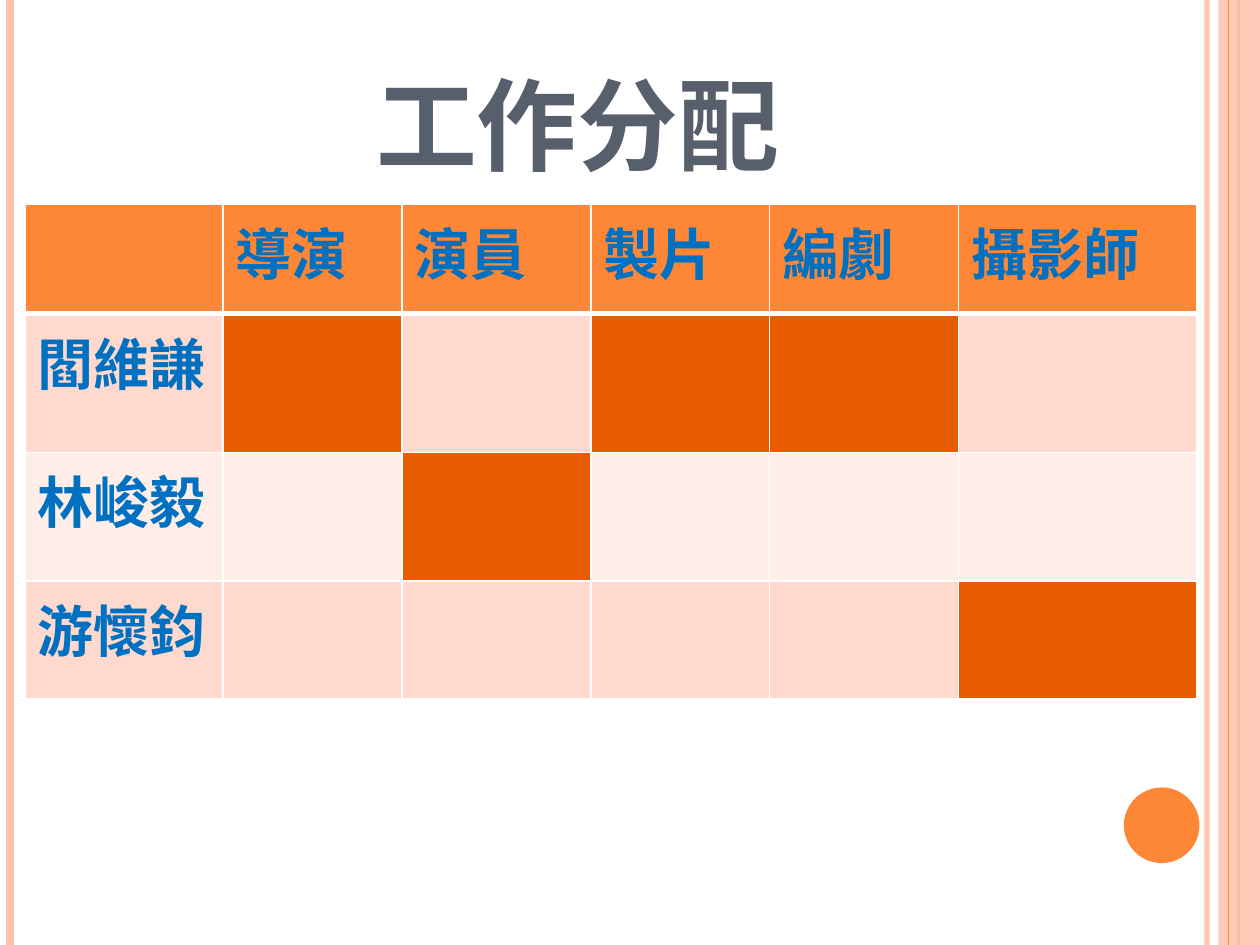
from dataclasses import dataclass
from typing import Optional

from lxml.etree import SubElement
from pptx import Presentation
from pptx.dml.color import RGBColor
from pptx.enum.shapes import MSO_CONNECTOR, MSO_SHAPE
from pptx.enum.text import MSO_ANCHOR, PP_ALIGN
from pptx.oxml import parse_xml
from pptx.oxml.ns import nsdecls, qn
from pptx.util import Inches, Pt

WIDTH, HEIGHT = 10, 7.5


@dataclass(frozen=True)
class Theme:
    font: str = "Noto Sans CJK SC"
    title_size: int = 72
    table_size: int = 32
    title: str = "575F6D"
    table_text: str = "0070C0"
    accent: str = "FE8637"
    pale_accent: str = "FEC3AE"
    assigned: str = "E75C01"
    bands: tuple = ("FFD9CE", "FFEDE8")
    border: str = "FFFFFF"


@dataclass(frozen=True)
class Stripe:
    x: float
    color: str
    weight: float
    opacity: Optional[int] = None


@dataclass(frozen=True)
class Member:
    name: str
    jobs: tuple
    height: float


THEME = Theme()
BACK_STRIPES = (
    Stripe(9.58, THEME.pale_accent, 3, 93),
    Stripe(0.08, THEME.pale_accent, 4.5),
    Stripe(9.83, THEME.accent, 1.5),
)
FRONT_STRIPE = Stripe(9.75, THEME.accent, 0.75)
JOBS = ("導演", "演員", "製片", "編劇", "攝影師")
COLUMN_WIDTHS = (1.57, 1.42, 1.5, 1.42, 1.5, 1.89)
HEADER_HEIGHT = 0.87
MEMBERS = (
    Member("閻維謙", ("導演", "製片", "編劇"), 1.1),
    Member("林峻毅", ("演員",), 1.02),
    Member("游懷鈞", ("攝影師",), 0.94),
)


def set_opacity(properties, percent: int) -> None:
    color = next(properties.iter(qn("a:srgbClr")))
    SubElement(color, qn("a:alpha"), val=str(percent * 1000))


def style_paragraph(paragraph, size: int, color: str) -> None:
    font = paragraph.font
    font.size, font.bold = Pt(size), True
    font.color.rgb = RGBColor.from_string(color)
    font.name = THEME.font
    properties = paragraph._p.pPr.find(qn("a:defRPr"))
    SubElement(properties, qn("a:ea"), typeface=THEME.font)


def add_stripe(slide, stripe: Stripe) -> None:
    x = Inches(stripe.x)
    connector = slide.shapes.add_connector(
        MSO_CONNECTOR.STRAIGHT, x, 0, x, Inches(HEIGHT))
    connector.line.color.rgb = RGBColor.from_string(stripe.color)
    connector.line.width = Pt(stripe.weight)
    properties = connector._element.spPr
    if stripe.opacity is not None:
        set_opacity(properties, stripe.opacity)
    SubElement(properties, qn("a:effectLst"))


def add_plain_shape(slide, kind, left: float, top: float, width: float,
                    height: float, color: str):
    shape = slide.shapes.add_shape(
        kind, Inches(left), Inches(top), Inches(width), Inches(height))
    shape.shadow.inherit = False
    shape.fill.solid()
    shape.fill.fore_color.rgb = RGBColor.from_string(color)
    shape.line.fill.background()
    return shape


def format_cell(cell, text: str, fill: str, top: int = 1, bottom: int = 1) -> None:
    cell.fill.solid()
    cell.fill.fore_color.rgb = RGBColor.from_string(fill)
    properties = cell._tc.get_or_add_tcPr()
    sides = (("L", 1), ("R", 1), ("T", top), ("B", bottom))
    for index, (side, weight) in enumerate(sides):
        properties.insert(index, parse_xml(
            f'<a:ln{side} {nsdecls("a")} w="{Pt(weight)}"><a:solidFill>'
            f'<a:srgbClr val="{THEME.border}"/></a:solidFill></a:ln{side}>'))
    if text:
        cell.text = text
        style_paragraph(cell.text_frame.paragraphs[0],
                        THEME.table_size, THEME.table_text)


def add_title(slide, text: str) -> None:
    title = slide.shapes.title
    title.left, title.top = Inches(0.5), Inches(0.3)
    title.width, title.height = Inches(8.17), Inches(1.25)
    frame = title.text_frame
    frame.text = text
    frame.word_wrap = True
    frame.vertical_anchor = MSO_ANCHOR.BOTTOM
    paragraph = frame.paragraphs[0]
    paragraph.alignment = PP_ALIGN.CENTER
    style_paragraph(paragraph, THEME.title_size, THEME.title)
    paragraph._p.pPr.find(qn("a:defRPr")).set("cap", "small")


def add_assignments(slide) -> None:
    heights = (HEADER_HEIGHT, *(member.height for member in MEMBERS))
    table = slide.shapes.add_table(
        len(heights), len(COLUMN_WIDTHS), Inches(0.2), Inches(1.62),
        Inches(sum(COLUMN_WIDTHS)), Inches(sum(heights))).table
    table.first_row = table.horz_banding = False
    for column, width in zip(table.columns, COLUMN_WIDTHS):
        column.width = Inches(width)
    for row, height in zip(table.rows, heights):
        row.height = Inches(height)

    # Header row, set off by a thicker rule
    for column, text in enumerate(("", *JOBS)):
        format_cell(table.cell(0, column), text, THEME.accent, bottom=3)

    # One banded row per member, with the assigned jobs filled in
    for row, member in enumerate(MEMBERS, start=1):
        band = THEME.bands[(row - 1) % 2]
        top = 3 if row == 1 else 1
        format_cell(table.cell(row, 0), member.name, band, top)
        for column, job in enumerate(JOBS, start=1):
            fill = THEME.assigned if job in member.jobs else band
            format_cell(table.cell(row, column), "", fill, top)


def main() -> None:
    presentation = Presentation()
    presentation.slide_width = Inches(WIDTH)
    presentation.slide_height = Inches(HEIGHT)
    slide = presentation.slides.add_slide(presentation.slide_layouts[5])

    # Side decoration
    for stripe in BACK_STRIPES:
        add_stripe(slide, stripe)
    side_band = add_plain_shape(slide, MSO_SHAPE.RECTANGLE, 9.67, 0,
                                0.33, HEIGHT, THEME.pale_accent)
    set_opacity(side_band._element.spPr, 87)
    add_stripe(slide, FRONT_STRIPE)
    add_plain_shape(slide, MSO_SHAPE.OVAL, 8.92, 6.25, 0.6, 0.6, THEME.accent)

    # Content
    add_title(slide, "工作分配")
    add_assignments(slide)
    presentation.save("out.pptx")


if __name__ == "__main__":
    main()
